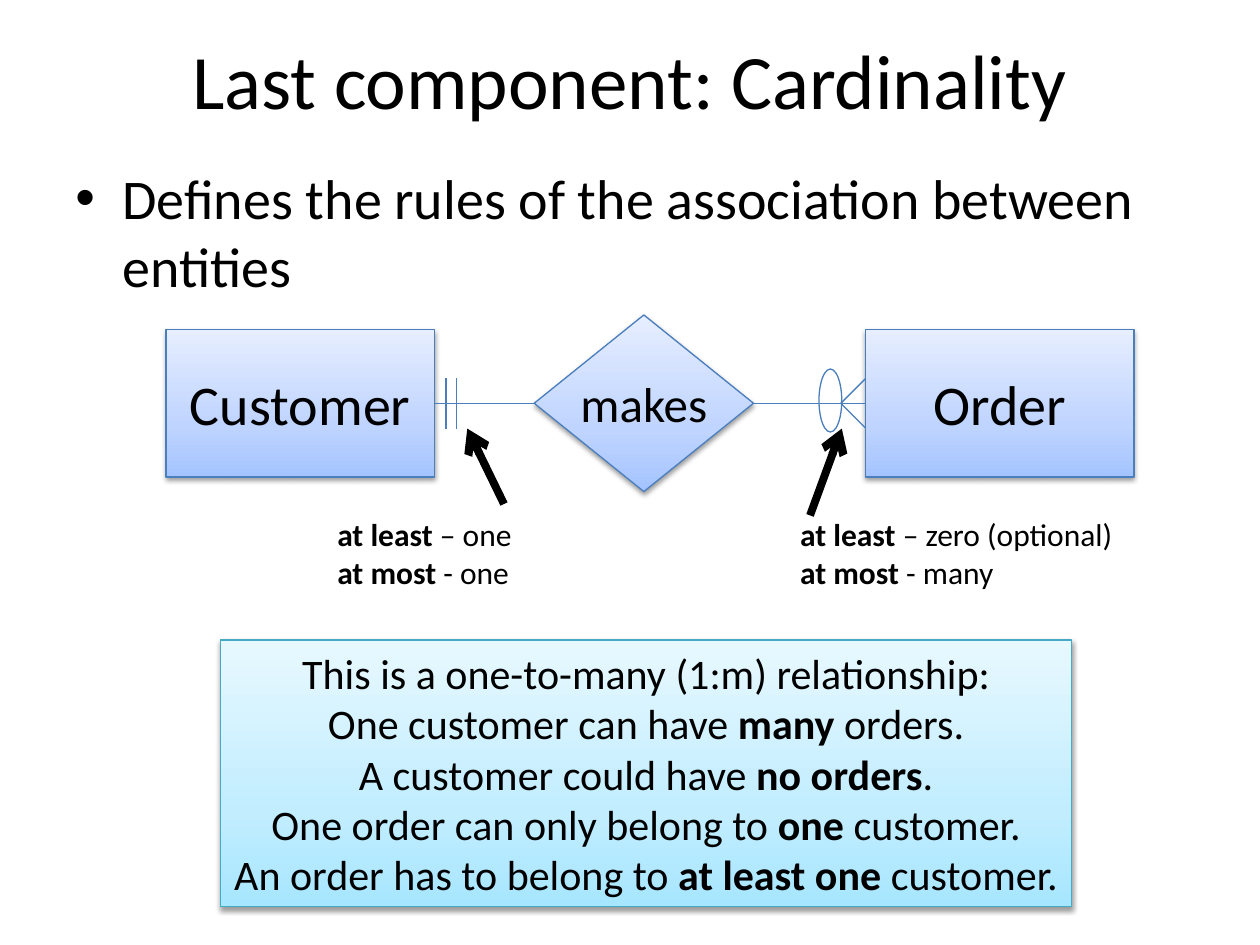
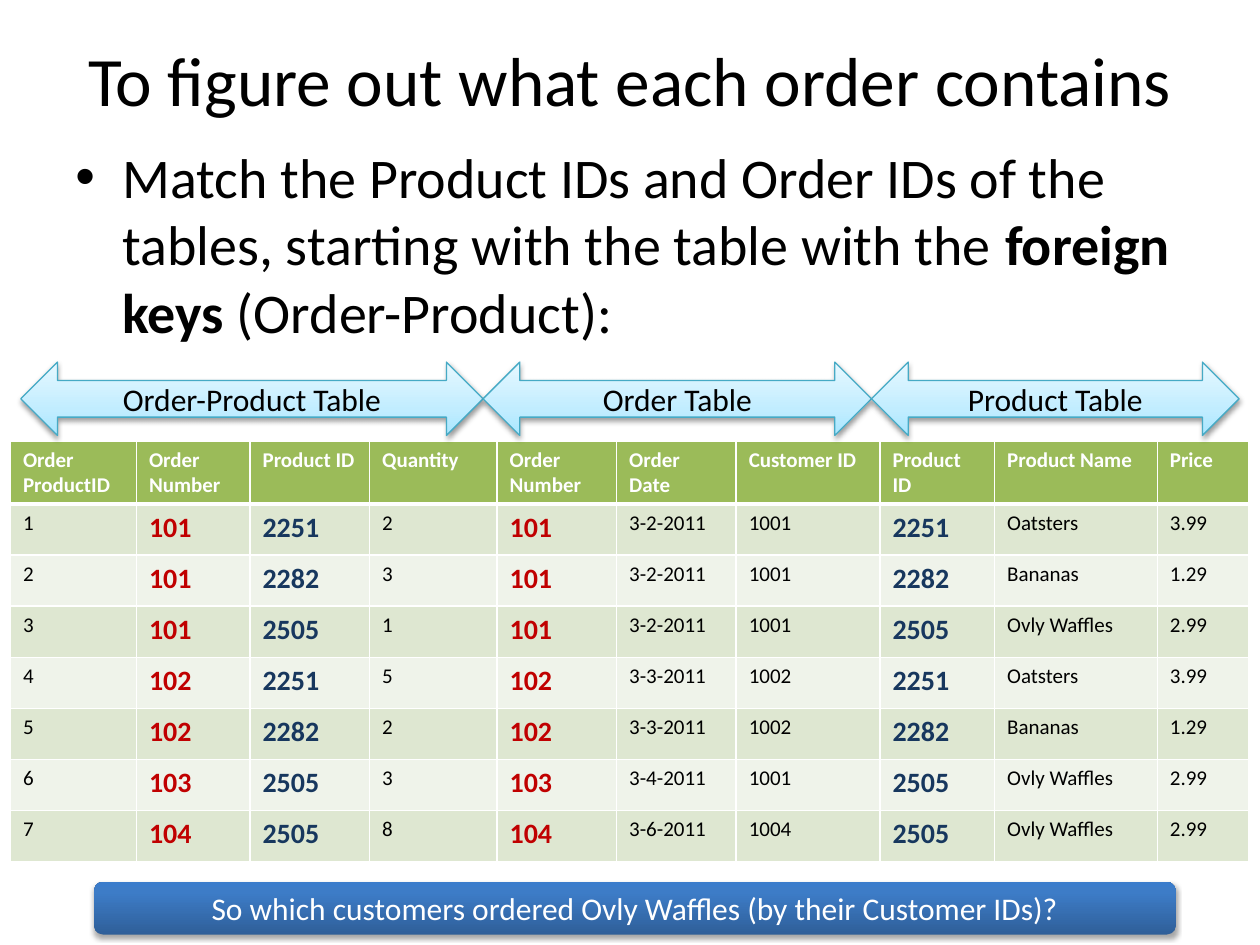
from dataclasses import dataclass
from itertools import pairwise

from lxml.etree import SubElement
from pptx import Presentation
from pptx.dml.color import RGBColor
from pptx.enum.shapes import MSO_CONNECTOR as Link, MSO_SHAPE as Form
from pptx.enum.text import MSO_ANCHOR as Anchor, MSO_AUTO_SIZE as Fit, PP_ALIGN as Align
from pptx.oxml.ns import qn
from pptx.util import Cm, Pt


@dataclass(frozen=True)
class Theme:
    """Colours, gradients and type sizes shared by the slides."""

    font: str = "Calibri"
    ink: str = "000000"
    white: str = "FFFFFF"
    blue_line: str = "4B7EBC"
    aqua_line: str = "46AAC5"
    blue: tuple = ((0, "A4C4FF"), (35, "BFD4FF"), (100, "E6EEFF"))
    aqua: tuple = ((0, "A7E6FF"), (35, "C1EDFF"), (100, "E7F8FF"))
    navy: tuple = ((0, "2F5F99"), (80, "3D7CC7"), (100, "3A7CCB"))
    header: str = "9BBB59"
    bands: tuple = ("DEE7D1", "EFF3EA")
    order_key: str = "C00000"
    product_key: str = "17375E"
    title: float = 44
    long_title: float = 39.6
    body: float = 32
    verb: float = 28
    summary: float = 24
    label: float = 18
    key: float = 16
    cell: float = 12
    hairline: float = 0.75
    pointer: float = 4.5


THEME = Theme()

COLUMNS = (
    ("Order\nProductID", 2.54), ("Order\nNumber", 2.29), ("Product ID", 2.41),
    ("Quantity", 2.57), ("Order Number", 2.41), ("Order Date", 2.41),
    ("Customer ID", 2.9), ("Product ID", 2.31), ("Product Name", 3.28), ("Price", 1.85),
)
ORDER_COLUMNS, PRODUCT_COLUMNS = (1, 4), (2, 7)
ORDERS = {
    "101": ("3-2-2011", "1001"),
    "102": ("3-3-2011", "1002"),
    "103": ("3-4-2011", "1001"),
    "104": ("3-6-2011", "1004"),
}
PRODUCTS = {
    "2251": ("Oatsters", "3.99"),
    "2282": ("Bananas", "1.29"),
    "2505": ("Ovly Waffles", "2.99"),
}
ORDER_PRODUCTS = (
    ("101", "2251", "2"), ("101", "2282", "3"), ("101", "2505", "1"),
    ("102", "2251", "5"), ("102", "2282", "2"), ("103", "2505", "3"),
    ("104", "2505", "8"),
)


def rgb(colour):
    """Turn a hex string into a colour."""
    return RGBColor.from_string(colour)


def place(left, top, width, height):
    """Give a position and size in centimetres as lengths."""
    return Cm(left), Cm(top), Cm(width), Cm(height)


def style_span(span, size, colour, bold=False):
    """Format one run."""
    span.font.name = THEME.font
    span.font.size = Pt(size)
    span.font.bold = bold
    span.font.color.rgb = rgb(colour)


def write(frame, lines, size, colour=THEME.ink, align=Align.LEFT):
    """Write lines into a frame; parts between asterisks are bold."""
    frame.text = "\n".join(line.replace("*", "") for line in lines)
    for para, line in zip(frame.paragraphs, lines):
        para.alignment = align
        if "*" in line:
            para.clear()
            for index, part in enumerate(line.split("*")):
                if part:
                    span = para.add_run()
                    span.text = part
                    style_span(span, size, colour, index % 2 == 1)
        else:
            for span in para.runs:
                style_span(span, size, colour)


def add_page(deck, title, size):
    """Add a title-only slide with its formatted title."""
    page = deck.slides.add_slide(deck.slide_layouts[5])
    box = page.shapes.title
    box.left, box.top, box.width, box.height = place(1.27, 0, 22.86, 3.18)
    frame = box.text_frame
    write(frame, [title], size, align=Align.CENTER)
    frame.vertical_anchor = Anchor.MIDDLE
    frame.word_wrap, frame.auto_size = True, Fit.NONE
    return page


def add_bullet(page, text, *where):
    """Add a body box with one hanging bullet."""
    frame = page.shapes.add_textbox(*place(*where)).text_frame
    frame.word_wrap = True
    write(frame, [text], THEME.body)
    para = frame.paragraphs[0]
    para.space_before = Pt(THEME.body * 0.2)
    props = para._p.get_or_add_pPr()
    props.set("marL", str(Cm(0.95)))
    props.set("indent", str(-Cm(0.95)))
    SubElement(props, qn("a:buFont"), typeface="Arial")
    SubElement(props, qn("a:buChar"), char="•")


def add_note(page, lines, *where):
    """Add an unwrapped text box that fits its lines."""
    frame = page.shapes.add_textbox(*place(*where)).text_frame
    write(frame, lines, THEME.label)
    frame.word_wrap, frame.auto_size = False, Fit.SHAPE_TO_FIT_TEXT


def paint_gradient(shape, stops):
    """Fill a shape with an upward gradient."""
    shape.fill.gradient()
    shape.fill.gradient_angle = 90
    stop_list = shape._element.spPr.find(qn("a:gradFill")).find(qn("a:gsLst"))
    for stop in list(stop_list):
        stop_list.remove(stop)
    for position, colour in stops:
        stop = SubElement(stop_list, qn("a:gs"), pos=str(position * 1000))
        SubElement(stop, qn("a:srgbClr"), val=colour)


def cast_shadow(shape, opacity):
    """Give a shape a soft shadow below it."""
    shape.shadow.inherit = False
    effects = shape._element.spPr.find(qn("a:effectLst"))
    shadow = SubElement(effects, qn("a:outerShdw"), blurRad=str(Pt(3.1)),
                        dist=str(Pt(1.6)), dir="5400000", rotWithShape="0")
    colour = SubElement(shadow, qn("a:srgbClr"), val=THEME.ink)
    SubElement(colour, qn("a:alpha"), val=str(opacity * 1000))


def add_panel(page, form, where, lines, size, stops, line=None, colour=THEME.ink, opacity=38):
    """Add a gradient shape with centred text."""
    panel = page.shapes.add_shape(form, *place(*where))
    paint_gradient(panel, stops)
    cast_shadow(panel, opacity)
    if line:
        panel.line.color.rgb = rgb(line)
        panel.line.width = Pt(THEME.hairline)
    else:
        panel.line.fill.background()
    frame = panel.text_frame
    write(frame, lines, size, colour, Align.CENTER)
    frame.vertical_anchor = Anchor.MIDDLE
    frame.word_wrap = form != Form.DIAMOND


def add_line(page, start, end, colour=THEME.blue_line, width=THEME.hairline):
    """Add a straight line without a shadow."""
    line = page.shapes.add_connector(Link.STRAIGHT, *map(Cm, start + end))
    line.line.color.rgb = rgb(colour)
    line.line.width = Pt(width)
    SubElement(line._element.spPr, qn("a:effectLst"))
    return line


def add_pointer(page, start, end):
    """Add a thick arrow from start to end."""
    arrow = add_line(page, start, end, THEME.ink, THEME.pointer)
    SubElement(arrow.line._get_or_add_ln(), qn("a:tailEnd"), type="arrow")


def add_ring(page, *where):
    """Add an unfilled ellipse."""
    ring = page.shapes.add_shape(Form.OVAL, *place(*where))
    ring.fill.background()
    ring.line.color.rgb = rgb(THEME.blue_line)
    ring.line.width = Pt(THEME.hairline)
    ring.shadow.inherit = False


def style_cell(cell, text, fill, size, colour, bold, bottom):
    """Fill, border and write one table cell."""
    props = cell._tc.get_or_add_tcPr()
    for side, width in (("L", 1), ("R", 1), ("T", 1), ("B", bottom)):
        edge = SubElement(props, qn(f"a:ln{side}"), w=str(Pt(width)))
        SubElement(SubElement(edge, qn("a:solidFill")), qn("a:srgbClr"), val=THEME.white)
    cell.fill.solid()
    cell.fill.fore_color.rgb = rgb(fill)
    para = cell.text_frame.paragraphs[0]
    para.text = text
    for span in para.runs:
        style_span(span, size, colour, bold)


def add_joined_table(page, left, top, row_height):
    """Add the table that joins order lines, orders and products."""
    records = [
        (str(number), order, product, quantity, order, *ORDERS[order], product, *PRODUCTS[product])
        for number, (order, product, quantity) in enumerate(ORDER_PRODUCTS, 1)
    ]
    width = sum(size for _, size in COLUMNS)
    where = place(left, top, width, row_height * (len(records) + 1))
    table = page.shapes.add_table(len(records) + 1, len(COLUMNS), *where).table
    for row in table.rows:
        row.height = Cm(row_height)
    for index, (name, size) in enumerate(COLUMNS):
        table.columns[index].width = Cm(size)
        style_cell(table.cell(0, index), name, THEME.header, THEME.cell, THEME.white, True, 3)
    key_colours = dict.fromkeys(ORDER_COLUMNS, THEME.order_key)
    key_colours |= dict.fromkeys(PRODUCT_COLUMNS, THEME.product_key)
    for row, record in enumerate(records, 1):
        for index, value in enumerate(record):
            is_key = index in key_colours
            style_cell(table.cell(row, index), value, THEME.bands[(row - 1) % 2],
                       THEME.key if is_key else THEME.cell,
                       key_colours.get(index, THEME.ink), is_key, 1)


def build_cardinality(deck):
    """Build the slide that explains cardinality."""
    page = add_page(deck, "Last component: Cardinality", THEME.title)
    add_bullet(page, "Defines the rules of the association between entities",
               1.27, 3.18, 22.86, 12.57)
    axis, order_left = 8.13, 17.45
    for name, left in (("Customer", 3.35), ("Order", order_left)):
        add_panel(page, Form.RECTANGLE, (left, 6.65, 5.41, 2.97), [name],
                  THEME.body, THEME.blue, THEME.blue_line)
    add_panel(page, Form.DIAMOND, (10.77, 6.35, 4.42, 3.56), ["makes"],
              THEME.verb, THEME.blue, THEME.blue_line)
    for start, end in ((8.76, 10.77), (15.19, order_left)):
        add_line(page, (start, axis), (end, axis))
    for bar in (8.99, 9.2):
        add_line(page, (bar, axis - 0.51), (bar, axis + 0.51))
    for reach in (-0.5, 0.5):
        add_line(page, (order_left, axis + reach), (16.95, axis))
    add_ring(page, 16.51, 7.44, 0.46, 1.27)
    add_pointer(page, (10.16, 10.16), (9.42, 8.64))
    add_pointer(page, (16.33, 10.39), (16.97, 8.64))
    add_note(page, ["*at least *– one", "*at most *- one"], 6.55, 10.26, 4.5, 1.8)
    add_note(page, ["*at least *– zero (optional)", "*at most *- many"], 15.88, 10.26, 6.88, 1.8)
    facts = [
        "This is a one-to-many (1:m) relationship:",
        "One customer can have *many* orders.",
        "A customer could have *no orders*.",
        "One order can only belong to *one* customer.",
        "An order has to belong to *at least one *customer.",
    ]
    add_panel(page, Form.RECTANGLE, (4.45, 12.9, 17.15, 5.38), facts,
              THEME.summary, THEME.aqua, THEME.aqua_line)


def build_order_contents(deck):
    """Build the slide that joins the three tables."""
    page = add_page(deck, "To figure out what each order contains", THEME.long_title)
    add_bullet(page, "Match the Product IDs and Order IDs of the tables, starting with "
               "the table with the *foreign keys *(Order-Product):", 1.27, 2.75, 23.29, 13.54)
    add_joined_table(page, 0.21, 8.89, 1.03)
    names = ("Order-Product Table", "Order Table", "Product Table")
    for name, (left, right) in zip(names, pairwise((0.42, 9.74, 17.57, 24.98))):
        add_panel(page, Form.LEFT_RIGHT_ARROW, (left, 7.3, right - left, 1.48), [name],
                  THEME.label, THEME.aqua, THEME.aqua_line)
    question = "So which customers ordered Ovly Waffles (by their Customer IDs)?"
    add_panel(page, Form.ROUNDED_RECTANGLE, (1.9, 17.78, 21.8, 1.06), [question],
              THEME.label, THEME.navy, colour=THEME.white, opacity=35)


def main():
    """Build and save the deck."""
    deck = Presentation()
    deck.slide_width, deck.slide_height = Cm(25.4), Cm(19.05)
    build_cardinality(deck)
    build_order_contents(deck)
    deck.save("out.pptx")


if __name__ == "__main__":
    main()
